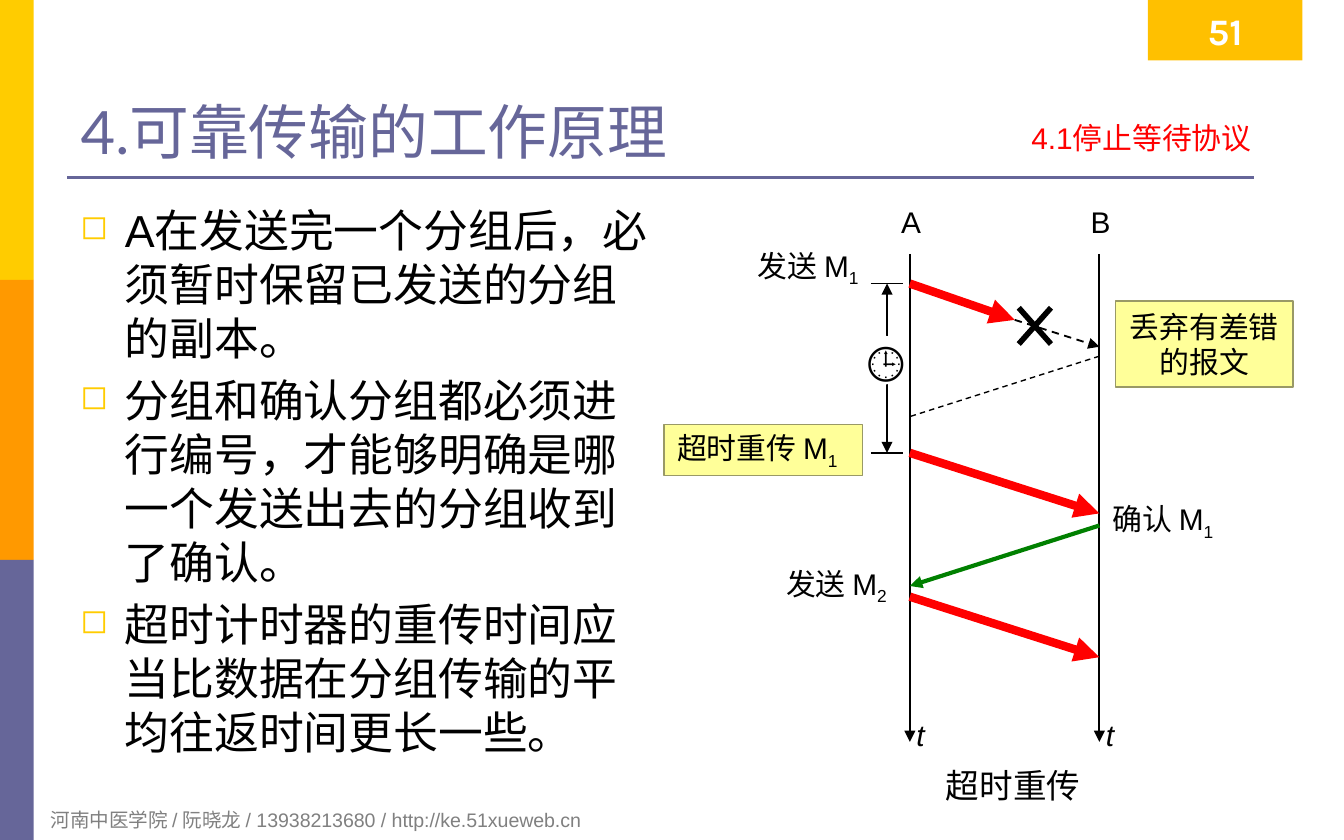
from lxml.etree import SubElement
from pptx import Presentation
from pptx.dml.color import RGBColor
from pptx.enum.dml import MSO_LINE
from pptx.enum.shapes import MSO_CONNECTOR, MSO_SHAPE
from pptx.enum.text import MSO_ANCHOR, PP_ALIGN
from pptx.oxml.ns import qn
from pptx.util import Inches, Pt

BLACK, RED, GREEN = "000000", "FF0000", "008000"
GOLD, SLATE, NOTE, EDGE = "FFCC00", "666699", "FFFF99", "999966"
LEFT, MID, RIGHT = PP_ALIGN.LEFT, PP_ALIGN.CENTER, PP_ALIGN.RIGHT


def color(code):
    return RGBColor.from_string(code)


def style(run, size, code=BLACK, **form):
    run.font.color.rgb = color(code)
    for key, value in {"name": "Arial", "size": Pt(size), **form}.items():
        setattr(run.font, key, value)


def fill_text(shape, text, size=16, code=BLACK, align=LEFT, sub="", wrap=False, **form):
    frame = shape.text_frame
    frame.word_wrap = wrap
    frame.text = text
    for para in frame.paragraphs:
        para.alignment = align
        for run in para.runs:
            style(run, size, code, **form)
    if sub:
        run = frame.paragraphs[-1].add_run()
        run.text = sub
        style(run, size, code, **form)
        run.font._element.set("baseline", "-25000")
    return frame


def label(slide, box, text, **form):
    shape = slide.shapes.add_textbox(*map(Inches, box))
    return fill_text(shape, text, **form)


def block(slide, box, code, edge=None, kind=MSO_SHAPE.RECTANGLE):
    shape = slide.shapes.add_shape(kind, *map(Inches, box))
    shape.shadow.inherit = False
    shape.fill.solid()
    shape.fill.fore_color.rgb = color(code)
    if edge:
        shape.line.color.rgb = color(edge)
        shape.line.width = Pt(0.75)
    else:
        shape.line.fill.background()
    return shape


def line(slide, start, end, code=BLACK, width=1, head=False, tail=False, dash=False):
    link = slide.shapes.add_connector(MSO_CONNECTOR.STRAIGHT, *map(Inches, start + end))
    link.line.color.rgb = color(code)
    link.line.width = Pt(width)
    if dash:
        link.line.dash_style = MSO_LINE.DASH
    for tag, shown in (("a:headEnd", head), ("a:tailEnd", tail)):
        if shown:
            SubElement(link.line._ln, qn(tag), type="triangle")
    SubElement(link._element.spPr, qn("a:effectLst"))


def add_frame(slide, wide, high):
    step = high / 3
    for row, code in enumerate((GOLD, "FF9900", SLATE)):
        block(slide, (0, row * step, 0.25, step), code)
    line(slide, (0.5, 1.32), (wide - 0.67, 1.32), SLATE, 1.5)
    label(slide, (0.28, high - 0.29, 6.77, 0.28),
          "河南中医学院 / 阮晓龙 / 13938213680 / http://ke.51xueweb.cn",
          size=10.5, code="808080", wrap=True)
    page = block(slide, (wide - 1.46, 0, 1.15, 0.45), "FFC000")
    fill_text(page, "51", size=20, code="FFFFFF", align=MID, name="Karla", bold=True)


def add_title(slide, box):
    title = slide.shapes.title
    for key, value in zip(("left", "top", "width", "height"), box):
        setattr(title, key, Inches(value))
    frame = fill_text(title, "4.可靠传输的工作原理", size=32, code=SLATE,
                      wrap=True, name="Lato")
    frame.vertical_anchor = MSO_ANCHOR.BOTTOM
    x, y, wide, high = box
    label(slide, (x + wide - 3.24, y + 0.59, 3.15, 0.39), "4.1停止等待协议",
          code=RED, align=RIGHT, wrap=True)


def add_points(slide, box, points):
    frame = label(slide, box, "\n".join(points), size=24, wrap=True)
    for row, para in enumerate(frame.paragraphs):
        prop = para._p.get_or_add_pPr()
        prop.set("marL", str(Inches(0.33)))
        prop.set("indent", str(Inches(-0.33)))
        tint = SubElement(prop, qn("a:buClr"))
        SubElement(tint, qn("a:srgbClr"), val=GOLD)
        SubElement(prop, qn("a:buSzPct"), val="75000")
        SubElement(prop, qn("a:buChar"), char="◻")
        if row:
            para.space_before = Pt(4.8)


def add_timer(slide, x, top, end):
    for y in (top, end):
        line(slide, (x - 0.12, y), (x + 0.12, y))
    line(slide, (x, top), (x, end), head=True, tail=True)
    block(slide, (x - 0.16, top + 0.39, 0.31, 0.36), "FFFFFF", kind=MSO_SHAPE.OVAL)
    label(slide, (x - 0.25, top + 0.32, 0.5, 0.5), "🕒", size=24)


def add_flow(slide, box):
    x, y, wide, high = box
    far, end = x + wide, y + high
    for name, axis in (("A", x), ("B", far)):
        line(slide, (axis, y), (axis, end), tail=True)
        label(slide, (axis - 0.17, y - 0.42, 0.36, 0.37), name, align=MID)
        label(slide, (axis - 0.05, end - 0.24, 0.29, 0.37), "t", italic=True)

    sent, again, second = y + 0.22, y + 1.48, y + 2.55
    lost = (x + 0.78, sent + 0.27)
    line(slide, (x, sent), lost, RED, 4.5, tail=True)
    line(slide, lost, (far, sent + 0.47), tail=True, dash=True)
    line(slide, (far, y + 0.76), (x, y + 1.21), width=0.75, dash=True)
    for start in (again, second):
        line(slide, (x, start), (far, start + 0.45), RED, 4.5, tail=True)
    line(slide, (far, y + 2.02), (x, y + 2.47), GREEN, 2.25, tail=True)

    for dx, dy, text, sub in ((-1.23, -0.1, "发送 M", "1"),
                              (-1.02, 2.27, "发送 M", "2"),
                              (wide, 1.79, "确认 M", "1")):
        label(slide, (x + dx, y + dy, 1.02, 0.37), text, sub=sub)

    retry = block(slide, (x - 1.83, y + 1.27, 1.48, 0.38), NOTE, EDGE)
    fill_text(retry, "超时重传 M", sub="1")
    drop = block(slide, (far + 0.12, y + 0.35, 1.32, 0.64), NOTE, EDGE)
    fill_text(drop, "丢弃有差错\n的报文", align=MID)

    add_timer(slide, x - 0.17, sent, again)
    for a, b in ((0.81, 1.05), (1.05, 0.81)):
        line(slide, (x + a, y + 0.4), (x + b, y + 0.67), width=3)
    label(slide, (x + 0.17, end + 0.12, 1.21, 0.4), "超时重传", size=18)


def main():
    deck = Presentation()
    wide, high = 10, 6.25
    deck.slide_width, deck.slide_height = Inches(wide), Inches(high)
    slide = deck.slides.add_slide(deck.slide_layouts[5])
    add_frame(slide, wide, high)
    add_title(slide, (0.5, 0.25, 9, 1.04))
    add_points(slide, (0.5, 1.46, 4.42, 4.13), (
        "A在发送完一个分组后，必须暂时保留已发送的分组的副本。",
        "分组和确认分组都必须进行编号，才能够明确是哪一个发送出去的分组收到了确认。",
        "超时计时器的重传时间应当比数据在分组传输的平均往返时间更长一些。",
    ))
    add_flow(slide, (6.77, 1.89, 1.41, 3.63))
    deck.save("out.pptx")


if __name__ == "__main__":
    main()
